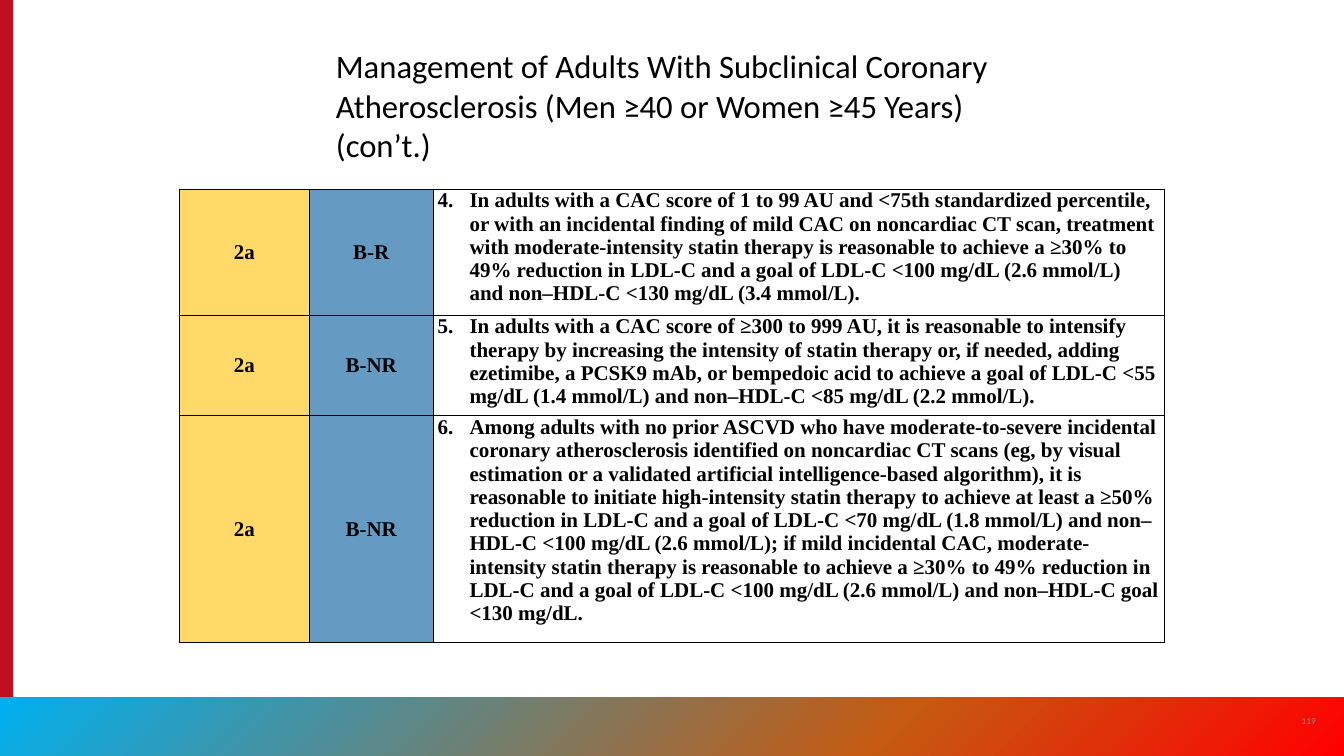
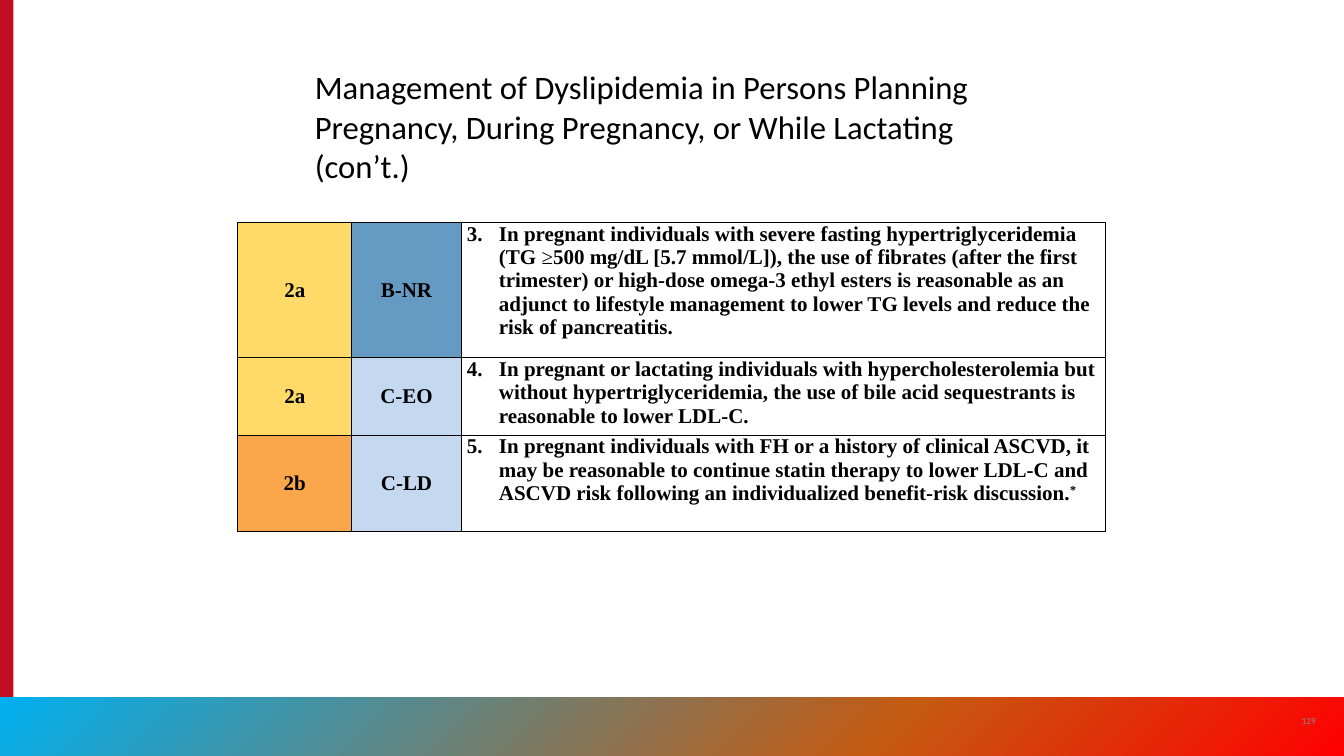
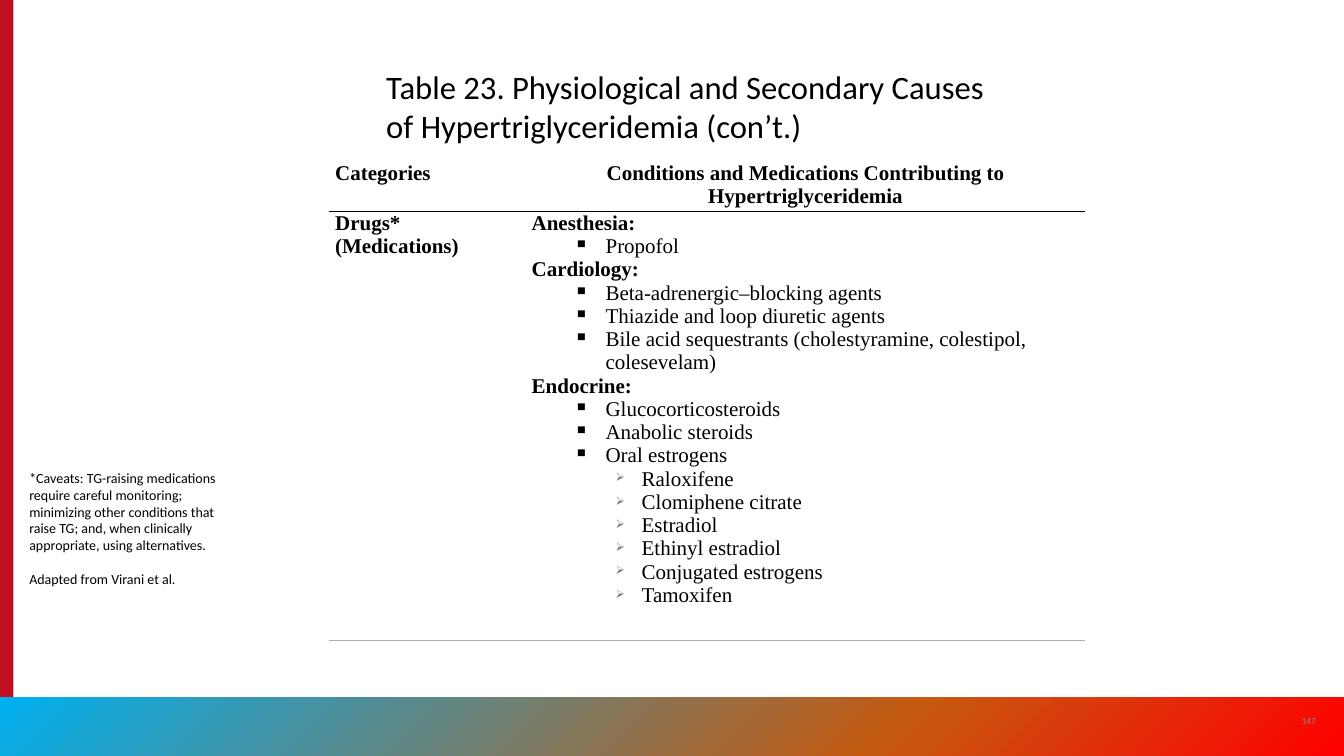
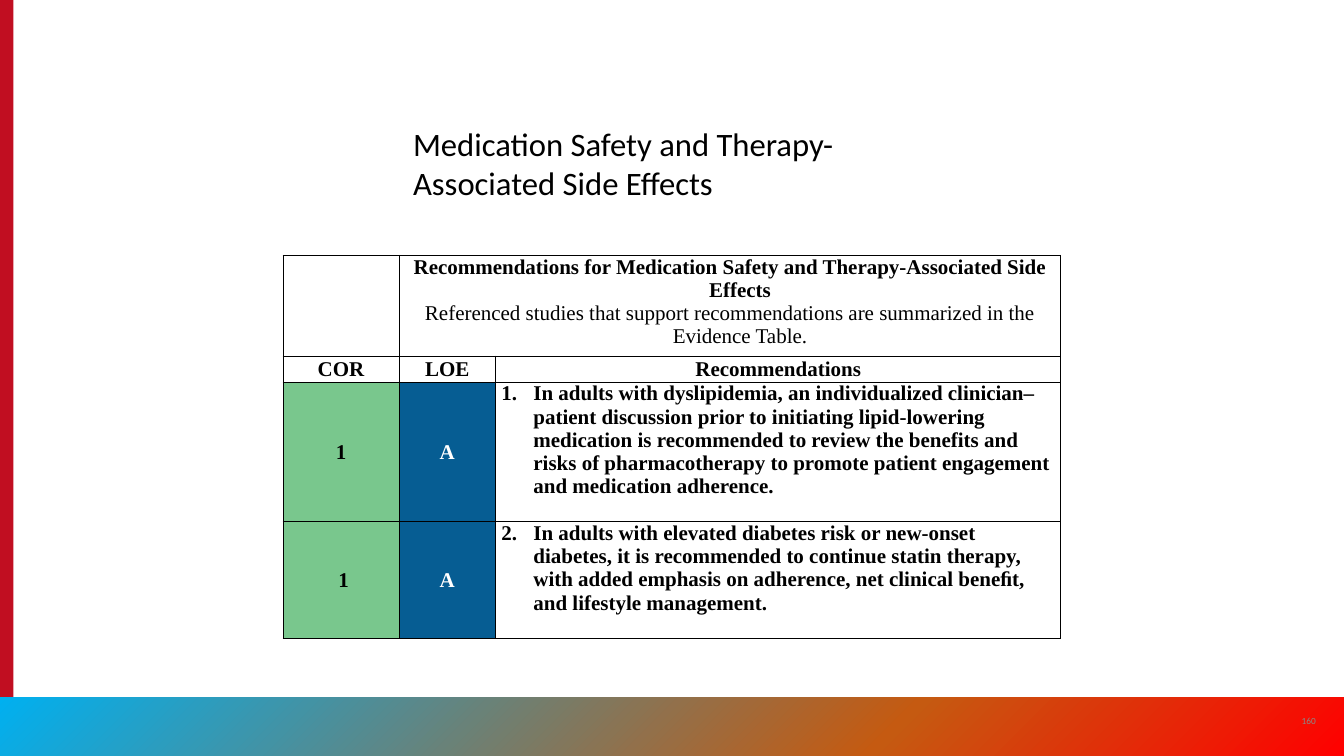
from lxml import etree
from pptx import Presentation
from pptx import util as u
from pptx.dml.color import RGBColor
from pptx.enum import shapes, text
from pptx.oxml import ns

SANS, SERIF = "Calibri", "Times New Roman"
INK = {
    "black": "000000", "white": "FFFFFF", "gray": "8A8B8A", "rule": "ADADAD",
    "mark": "767171", "red": "C10E21", "green": "79C78D", "gold": "FFDA68",
    "orange": "FAA74B", "navy": "065D93", "blue": "659BC2", "pale": "C4D9F0",
}
BAND = [(0, "00B0F0"), (66, "C55A11"), (100, "FF0000")]
GRADE = {
    "1": "green", "2a": "gold", "2b": "orange",
    "A": "navy", "B-R": "blue", "B-NR": "blue", "C-LD": "pale", "C-EO": "pale",
}

# Paragraph kinds: an integer kind is a numbered recommendation
KINDS = {
    "bold": {"bold": True},
    "mid": {"bold": True, "center": True},
    "lead": {"bold": True, "center": True, "indent": (0.24, -0.25)},
    "note": {"center": True, "indent": (0.24, -0.25)},
    "item": {"indent": (0.88, -0.38), "mark": "▪", "level": 1},
    "sub": {"indent": (1.31, -0.31), "mark": "➢", "level": 2, "small": True},
}


def rec(cor, loe, num, words):
    """One table row: class, level of evidence, numbered recommendation."""
    return [[("mid", cor)], [("mid", loe)], [(num, words)]]


SLIDES = [
    {
        "num": "119",
        "title": "Management of Adults With Subclinical Coronary Atherosclerosis (Men ≥40 or Women ≥45 Years) (con’t.)",
        "box": (3.9, 0.5, 8.19, 1.51),
        "at": (2.14, 2.25), "cols": (1.54, 1.48, 8.7), "rows": (1.5, 1.19, 2.7),
        "pad": 0.05, "grid": True,
        "cells": [
            rec("2a", "B-R", 4, "In adults with a CAC score of 1 to 99 AU and <75th standardized percentile, or with an incidental finding of mild CAC on noncardiac CT scan, treatment with moderate-intensity statin therapy is reasonable to achieve a ≥30% to 49% reduction in LDL-C and a goal of LDL-C <100 mg/dL (2.6 mmol/L) and non–HDL-C <130 mg/dL (3.4 mmol/L)."),
            rec("2a", "B-NR", 5, "In adults with a CAC score of ≥300 to 999 AU, it is reasonable to intensify therapy by increasing the intensity of statin therapy or, if needed, adding ezetimibe, a PCSK9 mAb, or bempedoic acid to achieve a goal of LDL-C <55 mg/dL (1.4 mmol/L) and non–HDL-C <85 mg/dL (2.2 mmol/L)."),
            rec("2a", "B-NR", 6, "Among adults with no prior ASCVD who have moderate-to-severe incidental coronary atherosclerosis identified on noncardiac CT scans (eg, by visual estimation or a validated artificial intelligence-based algorithm), it is reasonable to initiate high-intensity statin therapy to achieve at least a ≥50% reduction in LDL-C and a goal of LDL-C <70 mg/dL (1.8 mmol/L) and non–HDL-C <100 mg/dL (2.6 mmol/L); if mild incidental CAC, moderate-intensity statin therapy is reasonable to achieve a ≥30% to 49% reduction in LDL-C and a goal of LDL-C <100 mg/dL (2.6 mmol/L) and non–HDL-C goal <130 mg/dL."),
        ],
    },
    {
        "num": "129",
        "title": "Management of Dyslipidemia in Persons Planning Pregnancy, During Pregnancy, or While Lactating (con’t.)",
        "box": (3.65, 0.75, 8.7, 1.51),
        "at": (2.83, 2.65), "cols": (1.36, 1.3, 7.67), "rows": (1.61, 0.92, 1.15),
        "pad": 0.07, "grid": True,
        "cells": [
            rec("2a", "B-NR", 3, [
                ("In pregnant individuals with severe fasting hypertriglyceridemia (TG ", ""),
                ("≥", "plain"),
                ("500 mg/dL [5.7 mmol/L]), the use of fibrates (after the first trimester) or high-dose omega-3 ethyl esters is reasonable as an adjunct to lifestyle management to lower TG levels and reduce the risk of pancreatitis.", ""),
            ]),
            rec("2a", "C-EO", 4, "In pregnant or lactating individuals with hypercholesterolemia but without hypertriglyceridemia, the use of bile acid sequestrants is reasonable to lower LDL-C."),
            rec("2b", "C-LD", 5, [
                ("In pregnant individuals with FH or a history of clinical ASCVD, it may be reasonable to continue statin therapy to lower LDL-C and ASCVD risk following an individualized benefit-risk discussion.", ""),
                ("*", "super"),
            ]),
        ],
    },
    {
        "num": "147",
        "title": "Table 23. Physiological and Secondary Causes of Hypertriglyceridemia (con’t.)",
        "box": (4.5, 0.75, 7.67, 1.04),
        "at": (3.92, 1.92), "cols": (2.34, 6.66), "rows": (0.59, 5.1),
        "pad": 0.07, "grid": False,
        "cells": [
            [[("bold", "Categories")],
             [("mid", "Conditions and Medications Contributing to Hypertriglyceridemia")]],
            [[("bold", "Drugs*"), ("bold", "(Medications)")],
             [("bold", "Anesthesia:"),
              ("item", "Propofol"),
              ("bold", "Cardiology:"),
              ("item", "Beta-adrenergic–blocking agents"),
              ("item", "Thiazide and loop diuretic agents"),
              ("item", "Bile acid sequestrants (cholestyramine, colestipol, colesevelam)"),
              ("bold", "Endocrine:"),
              ("item", "Glucocorticosteroids"),
              ("item", "Anabolic steroids"),
              ("item", "Oral estrogens"),
              ("sub", "Raloxifene"),
              ("sub", "Clomiphene citrate"),
              ("sub", "Estradiol"),
              ("sub", "Ethinyl estradiol"),
              ("sub", "Conjugated estrogens"),
              ("sub", "Tamoxifen")]],
        ],
        "foot": [
            "*Caveats: TG-raising medications require careful monitoring; minimizing other conditions that raise TG; and, when clinically appropriate, using alternatives.",
            "Adapted from Virani et al.",
        ],
    },
    {
        "num": "160",
        "title": "Medication Safety and Therapy-Associated Side Effects",
        "box": (4.82, 1.42, 6.36, 1.04),
        "at": (3.37, 3.04), "cols": (1.38, 1.15, 6.73), "rows": (1.19, 0.31, 1.66, 1.39),
        "pad": 0.07, "grid": True, "merge": ((0, 1), (0, 2)),
        "cells": [
            [[],
             [("lead", "Recommendations for Medication Safety and Therapy-Associated Side Effects"),
              ("note", "Referenced studies that support recommendations are summarized in the Evidence Table.")],
             []],
            [[("mid", "COR")], [("mid", "LOE")], [("mid", "Recommendations")]],
            rec("1", "A", 1, "In adults with dyslipidemia, an individualized clinician–patient discussion prior to initiating lipid-lowering medication is recommended to review the benefits and risks of pharmacotherapy to promote patient engagement and medication adherence."),
            rec(" 1", "A", 2, "In adults with elevated diabetes risk or new-onset diabetes, it is recommended to continue statin therapy, with added emphasis on adherence, net clinical beneﬁt, and lifestyle management."),
        ],
    },
]
FOOT = (0.25, 5.54, 2.42, 2.12)
PLAIN = "{2D5ABB26-0587-4C30-8999-92F81FD0307C}"  # table style without lines or fills


def rgb(name):
    return RGBColor.from_string(INK[name])


def add(parent, tag, **attrs):
    node = etree.SubElement(parent, ns.qn(tag))
    for key, val in attrs.items():
        node.set(key, str(val))
    return node


def tint(parent, code):
    add(parent, "a:srgbClr", val=code)


def style(font, size, face, color="black", bold=False):
    font.size, font.name, font.bold = u.Pt(size), face, bold
    font.color.rgb = rgb(color)


def label(slide, box, lines, size, color="black", gap=0):
    shape = slide.shapes.add_textbox(*map(u.Inches, box))
    frame = shape.text_frame
    frame.word_wrap = True
    frame.text = "\n".join(lines)
    for i, para in enumerate(frame.paragraphs):
        if i and gap:
            para.space_before = u.Pt(gap)
        style(para.runs[0].font, size, SANS, color)
    return frame


def block(slide, box):
    shape = slide.shapes.add_shape(shapes.MSO_SHAPE.RECTANGLE, *map(u.Inches, box))
    shape.shadow.inherit = False
    shape.line.fill.background()
    shape.fill.solid()
    shape.fill.fore_color.rgb = rgb("red")
    return shape


def base(slide, num):
    """Side bar, gradient band and page number."""
    block(slide, (0, 0, 0.16, 9))
    band = block(slide, (0, 8.3, 16, 0.7))
    props = band._element.spPr
    solid = props.find(ns.qn("a:solidFill"))
    grad = etree.Element(ns.qn("a:gradFill"), rotWithShape="1")
    stops = add(grad, "a:gsLst")
    for pos, code in BAND:
        tint(add(stops, "a:gs", pos=pos * 1000), code)
    add(grad, "a:lin", ang=45 * 60000, scaled=0)
    props.replace(solid, grad)
    frame = label(slide, (15.34, 8.34, 0.48, 0.48), [num], 8, "gray")
    frame.vertical_anchor = text.MSO_ANCHOR.MIDDLE
    frame.paragraphs[0].alignment = text.PP_ALIGN.CENTER


def write(para, kind, words, color):
    num = kind if isinstance(kind, int) else None
    look = {"bold": True, "indent": (0.38, -0.38)} if num else KINDS[kind]
    props = para._p.get_or_add_pPr()
    if "indent" in look:
        left, first = map(u.Inches, look["indent"])
        props.set("marL", str(left))
        props.set("indent", str(first))
    if look.get("small"):
        tint(add(props, "a:buClr"), INK["mark"])
        add(props, "a:buSzPct", val=56000)
    if num:
        add(props, "a:buAutoNum", type="arabicPeriod", startAt=num)
    elif "mark" in look:
        add(props, "a:buChar", char=look["mark"])
    para.level = look.get("level", 0)
    if look.get("center"):
        para.alignment = text.PP_ALIGN.CENTER
    for part, form in [(words, "")] if isinstance(words, str) else words:
        run = para.add_run()
        run.text = part
        style(run.font, 18, SERIF, color, look.get("bold", False) and form != "plain")
        if form == "super":
            run._r.get_or_add_rPr().set("baseline", "30000")


def edge(cell, sides, color):
    props = cell._tc.get_or_add_tcPr()
    for side in sides:
        line = add(props, "a:ln" + side, w=u.Pt(1))
        tint(add(line, "a:solidFill"), INK[color])


def fill(cell, paras, pad):
    cell.margin_left = cell.margin_right = u.Inches(pad)
    cell.margin_top = cell.margin_bottom = 0
    key = paras[0][1] if paras and paras[0][0] == "mid" else ""
    grade = GRADE.get(key.strip())
    if grade:
        cell.fill.solid()
        cell.fill.fore_color.rgb = rgb(grade)
    else:
        cell.fill.background()
    if grade or key in ("COR", "LOE", "Recommendations"):
        cell.vertical_anchor = text.MSO_ANCHOR.MIDDLE
    frame = cell.text_frame
    for i, (kind, words) in enumerate(paras):
        para = frame.add_paragraph() if i else frame.paragraphs[0]
        write(para, kind, words, "white" if grade == "navy" else "black")


def grid(slide, data):
    cols, rows = data["cols"], data["rows"]
    size = (*data["at"], sum(cols), sum(rows))
    frame = slide.shapes.add_table(len(rows), len(cols), *map(u.Inches, size))
    table = frame.table
    table.first_row = table.horz_banding = False
    next(frame._element.iter(ns.qn("a:tableStyleId"))).text = PLAIN
    for col, wide in zip(table.columns, cols):
        col.width = u.Inches(wide)
    for row, high in zip(table.rows, rows):
        row.height = u.Inches(high)
    if "merge" in data:
        start, end = data["merge"]
        table.cell(*start).merge(table.cell(*end))
    for r, line in enumerate(data["cells"]):
        for c, paras in enumerate(line):
            cell = table.cell(r, c)
            if data["grid"]:
                edge(cell, "LRTB", "black")
            elif r == 0:
                edge(cell, "B", "black")
            else:
                edge(cell, "T", "black")
                edge(cell, "B", "rule")
            fill(cell, paras, data["pad"])


def main():
    deck = Presentation()
    deck.slide_width, deck.slide_height = u.Inches(16), u.Inches(9)
    for data in SLIDES:
        slide = deck.slides.add_slide(deck.slide_layouts[6])
        base(slide, data["num"])
        label(slide, data["box"], [data["title"]], 28)
        grid(slide, data)
        if "foot" in data:
            label(slide, FOOT, data["foot"], 12, gap=14.6)
    deck.save("out.pptx")


if __name__ == "__main__":
    main()
